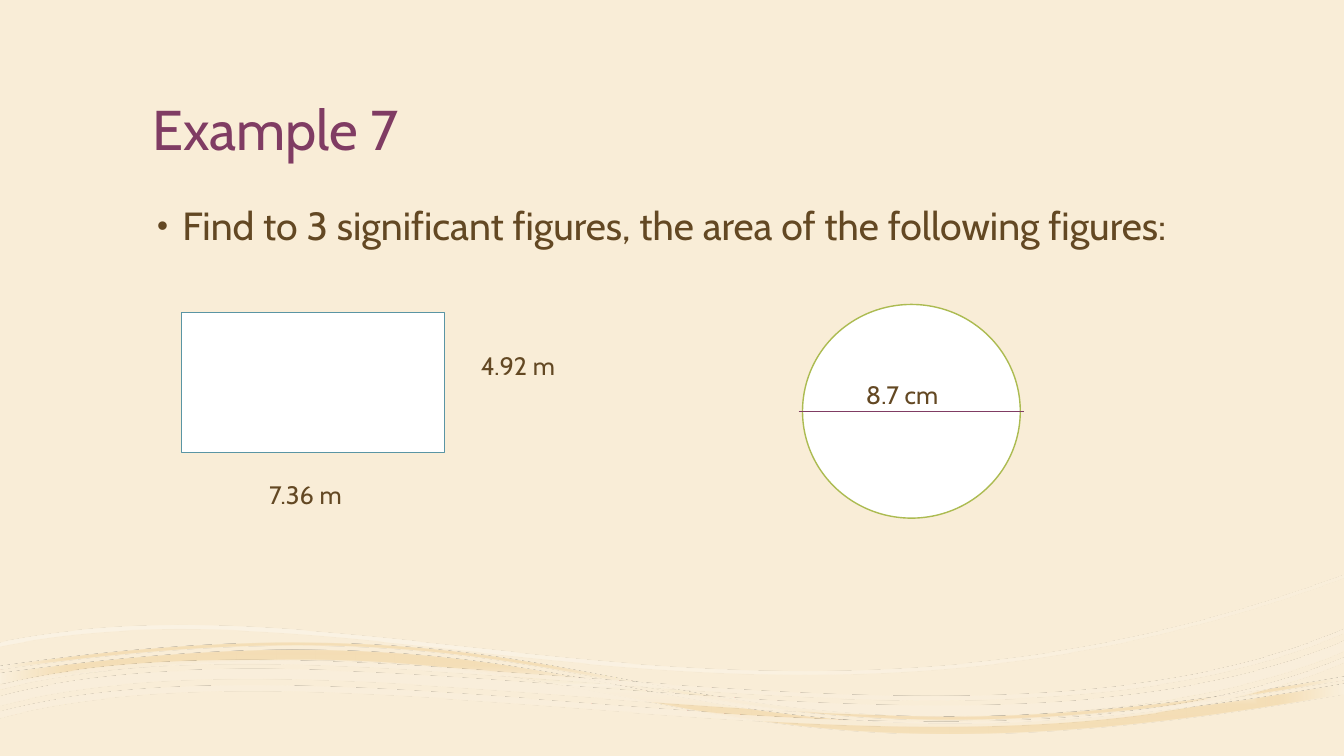
from math import cos, radians, sin

from lxml import etree
from pptx import Presentation
from pptx.dml.color import RGBColor
from pptx.enum.shapes import MSO_CONNECTOR, MSO_SHAPE
from pptx.enum.text import MSO_ANCHOR, MSO_AUTO_SIZE, PP_ALIGN
from pptx.oxml import parse_xml
from pptx.oxml.ns import nsdecls, qn
from pptx.util import Inches, Pt

RECTANGLE, ELLIPSE = MSO_SHAPE.RECTANGLE, MSO_SHAPE.OVAL
STRAIGHT = MSO_CONNECTOR.STRAIGHT
LEFT, BOTTOM = PP_ALIGN.LEFT, MSO_ANCHOR.BOTTOM
NO_AUTOFIT, GROW = MSO_AUTO_SIZE.NONE, MSO_AUTO_SIZE.SHAPE_TO_FIT_TEXT

FONT = "Cabin"
COLORS = {
    "background": "F9EDD7",
    "title": "803C63",
    "text": "634823",
    "white": "FFFFFF",
    "rectangle": "5A95A4",
    "circle": "ACBB51",
    "sand": "FAF1DF",
    "gold": "F4DEB7",
    "deep gold": "F4DDB3",
    "cream": "FAEFDC",
}
WAVE_TILT = 3.5


def color(name):
    return RGBColor.from_string(COLORS[name])


def style_text(paragraph, text, size, color_name):
    paragraph.text = text
    paragraph.alignment = LEFT
    paragraph.font.name = FONT
    paragraph.font.size = Pt(size)
    paragraph.font.color.rgb = color(color_name)


prs = Presentation()
prs.slide_width, prs.slide_height = Inches(13.33), Inches(7.5)
slide = prs.slides.add_slide(prs.slide_layouts[5])
slide.background.fill.solid()
slide.background.fill.fore_color.rgb = color("background")

# Each wave has a frame (left, top, width, height), ribbons, gradient stops
# (position %, colour, opacity %) and a gradient direction. A ribbon is a ring
# of Bezier curves in slide inches, joined by straight edges.
waves = [
    ((0.01, 6.12, 13.31, 1.35), [
        [[(3.06, 6.45), (6.7, 6.47), (7.38, 7.82), (13.33, 6.78)],
         [(13.33, 6.88), (6.02, 8.16), (6.67, 5.83), (0, 6.78)],
         [(0, 6.68), (1.24, 6.51), (2.22, 6.44), (3.06, 6.45)]],
        [[(3.06, 6.38), (6.7, 6.4), (7.38, 7.75), (13.33, 6.71)],
         [(13.33, 6.74), (6.02, 8.02), (6.67, 5.69), (0, 6.64)],
         [(0, 6.61), (1.24, 6.43), (2.22, 6.37), (3.06, 6.38)]],
    ],
        [(0, "sand", 90), (18, "gold", 100), (37, "deep gold", 90), (100, "sand", 100)],
        '<a:path path="shape"><a:fillToRect l="50000" t="50000" r="50000" b="50000"/></a:path>'),
    ((0.03, 5.88, 13.35, 1.71), [
        [[(13.33, 5.73), (7.54, 7.88), (3.73, 5.63), (0, 6.41)],
         [(0, 6.37), (3.73, 5.59), (7.54, 7.84), (13.33, 5.7)]],
    ],
        [(36, "white", 30), (100, "background", 48)],
        '<a:lin ang="2700000" scaled="0"/>'),
    ((-0.01, 6.25, 13.36, 1.15), [
        [[(13.33, 6.57), (9.55, 8.15), (3.49, 6.18), (0, 7.12)],
         [(0, 7.06), (3.49, 6.12), (9.55, 8.1), (13.33, 6.52)]],
        [[(13.33, 6.46), (9.55, 8.04), (3.49, 6.06), (0, 7)],
         [(0, 6.91), (3.49, 5.96), (9.55, 7.94), (13.33, 6.36)]],
        [[(13.33, 6.28), (9.58, 7.9), (3.51, 5.93), (0, 6.84)],
         [(0, 6.8), (3.51, 5.89), (9.58, 7.86), (13.33, 6.24)]],
    ],
        [(36, "white", 47), (100, "cream", 82)],
        '<a:path path="rect"><a:fillToRect l="100000" t="100000"/></a:path>'),
]
tilt_cos, tilt_sin = cos(radians(WAVE_TILT)), sin(radians(WAVE_TILT))
for (left, top, width, height), ribbons, stops, direction in waves:
    right, bottom = left + width, top + height
    builder = slide.shapes.build_freeform(Inches(left), Inches(top))
    builder.add_line_segments([
        (Inches(x), Inches(y)) for x, y in [(right, top), (right, bottom), (left, bottom)]
    ])
    wave = builder.convert_to_shape()
    wave.rotation = 360 - WAVE_TILT
    wave.shadow.inherit = False
    wave.line.fill.background()
    wave.fill.background()

    # Curves need cubicBezTo, with points turned back into the untilted frame.
    properties = wave.element.spPr
    outline = next(properties.iter(qn("a:path")))
    for command in list(outline):
        outline.remove(command)
    for curves in ribbons:
        for index, curve in enumerate(curves):
            local = []
            for x, y in curve:
                dx, dy = x - left - width / 2, y - top - height / 2
                local.append((width / 2 + dx * tilt_cos - dy * tilt_sin,
                              height / 2 + dx * tilt_sin + dy * tilt_cos))
            for tag, points in [("a:lnTo" if index else "a:moveTo", local[:1]),
                                ("a:cubicBezTo", local[1:])]:
                command = etree.SubElement(outline, qn(tag))
                for x, y in points:
                    etree.SubElement(command, qn("a:pt"),
                                     x=str(Inches(x)), y=str(Inches(y)))
        etree.SubElement(outline, qn("a:close"))

    stop_xml = "".join(
        f'<a:gs pos="{position * 1000}"><a:srgbClr val="{COLORS[name]}">'
        f'<a:alpha val="{opacity * 1000}"/></a:srgbClr></a:gs>'
        for position, name, opacity in stops
    )
    gradient = parse_xml(
        f'<a:gradFill {nsdecls("a")} rotWithShape="1"><a:gsLst>{stop_xml}</a:gsLst>'
        f'{direction}</a:gradFill>'
    )
    properties.replace(properties.find(qn("a:noFill")), gradient)

title = slide.shapes.title
title.left, title.top = Inches(1.41), Inches(0.33)
title.width, title.height = Inches(10.5), Inches(1.33)
title.text_frame.auto_size = NO_AUTOFIT
title.text_frame.vertical_anchor = BOTTOM
heading = title.text_frame.paragraphs[0]
style_text(heading, "Example 7", 40, "title")
heading.line_spacing = 0.9

body = slide.shapes.add_textbox(Inches(1.41), Inches(2), Inches(10.5), Inches(4.33))
body.text_frame.word_wrap = True
task = body.text_frame.paragraphs[0]
style_text(task, "Find to 3 significant figures, the area of the following figures:",
           28, "text")
task.line_spacing = 0.9
task.space_before = Pt(18)
bullet_format = task._p.get_or_add_pPr()
bullet_format.set("marL", str(Inches(0.3)))
bullet_format.set("indent", str(Inches(-0.25)))
etree.SubElement(bullet_format, qn("a:buSzPct")).set("val", "80000")
etree.SubElement(bullet_format, qn("a:buFont")).set("typeface", "Arial")
etree.SubElement(bullet_format, qn("a:buChar")).set("char", "•")

for preset, left, top, width, height, line_color in [
    (RECTANGLE, 1.8, 3.1, 2.61, 1.39, "rectangle"),
    (ELLIPSE, 7.96, 3.02, 2.16, 2.12, "circle"),
]:
    figure = slide.shapes.add_shape(
        preset, Inches(left), Inches(top), Inches(width), Inches(height))
    figure.shadow.inherit = False
    figure.fill.solid()
    figure.fill.fore_color.rgb = color("white")
    figure.line.color.rgb = color(line_color)
    figure.line.width = Pt(1)

diameter = slide.shapes.add_connector(
    STRAIGHT, Inches(7.92), Inches(4.08), Inches(10.16), Inches(4.08))
diameter.line.color.rgb = color("title")
diameter.line.width = Pt(0.5)
etree.SubElement(diameter.element.spPr, qn("a:effectLst"))

for measure, left, top, width in [
    ("4.92 m", 4.67, 3.43, 1.22),
    ("7.36 m", 2.57, 4.71, 1.53),
    ("8.7 cm", 8.49, 3.71, 1.22),
]:
    label = slide.shapes.add_textbox(
        Inches(left), Inches(top), Inches(width), Inches(0.4))
    label.text_frame.word_wrap = True
    label.text_frame.auto_size = GROW
    style_text(label.text_frame.paragraphs[0], measure, 18, "text")

prs.save("out.pptx")
